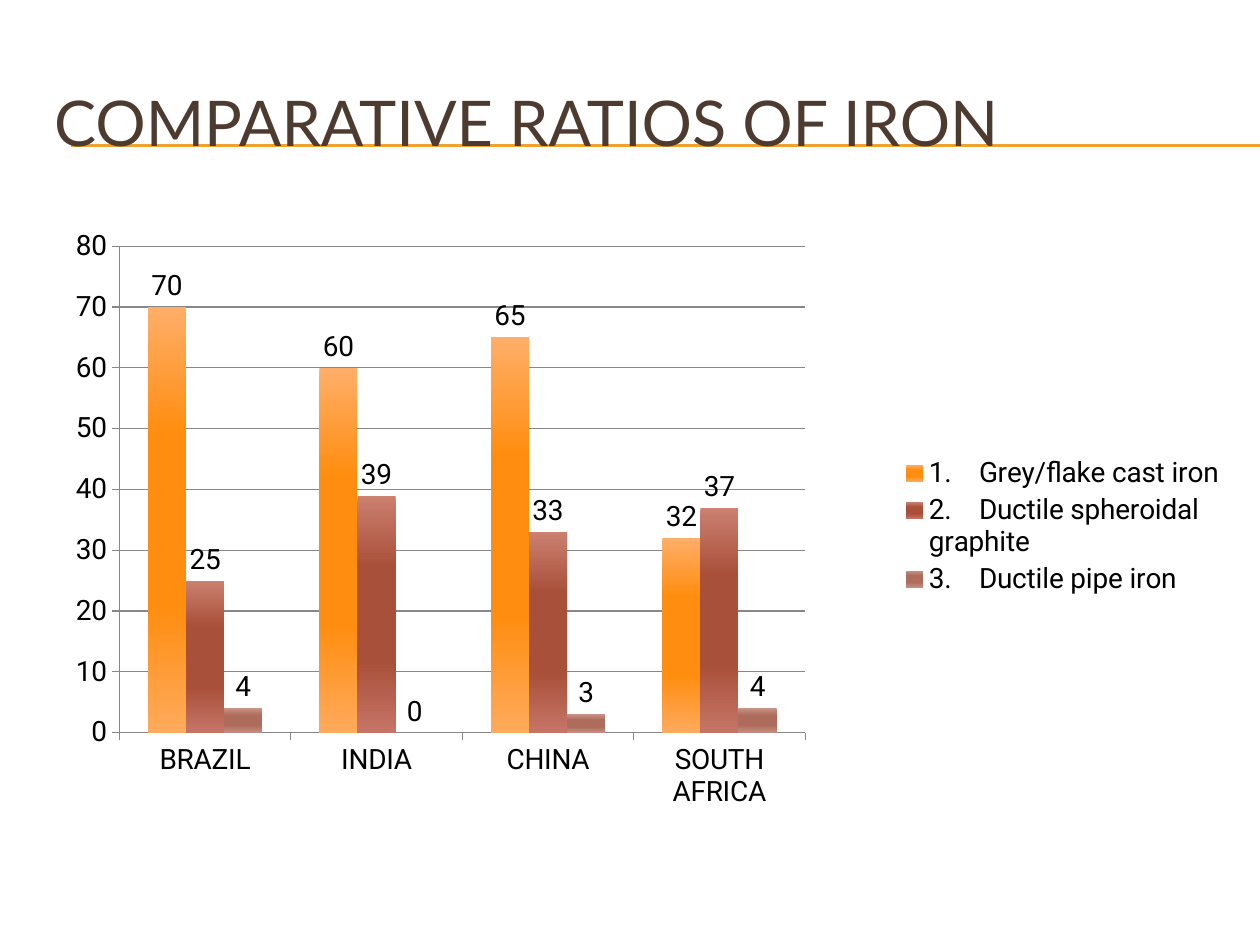
from dataclasses import dataclass

from lxml import etree
from pptx import Presentation
from pptx import util as u
from pptx.chart.data import CategoryChartData
from pptx.dml.color import RGBColor
from pptx.enum import chart as ch, shapes, text
from pptx.oxml import parse_xml
from pptx.oxml.ns import nsdecls, qn

WIDE, HIGH = 10, 7.5


@dataclass(frozen=True)
class Theme:
    head: str = "4E3B30"
    rule: str = "F0A22E"
    ink: str = "000000"
    grid: str = "878787"
    head_font: str = "Lato"
    body_font: str = "Roboto"
    head_size: int = 36
    body_size: int = 16
    thin: float = 0.75


@dataclass(frozen=True)
class Iron:
    name: str
    shares: tuple[int, ...]
    top: str
    core: str
    base: str


@dataclass(frozen=True)
class Box:
    """Left, top, width and height as shares of the slide or chart."""
    x: float
    y: float
    w: float
    h: float

    def place(self) -> tuple[int, ...]:
        return (u.Inches(self.x * WIDE), u.Inches(self.y * HIGH),
                u.Inches(self.w * WIDE), u.Inches(self.h * HIGH))


THEME = Theme()
TITLE = Box(0.033, 0.067, 0.95, 0.123)
CHART = Box(0.033, 0.227, 0.95, 0.66)
PLOT = Box(0.065, 0.051, 0.573, 0.78)
RULES = (1.15 / HIGH, 1.16 / HIGH)
LANDS = ("BRAZIL", "INDIA", "CHINA", "SOUTH AFRICA")
IRONS = (
    Iron("1.    Grey/flake cast iron", (70, 60, 65, 32),
         "FFAE69", "FF8D0F", "FFAA5C"),
    Iron("2.    Ductile spheroidal graphite", (25, 39, 33, 37),
         "CB8070", "A9503A", "C57568"),
    Iron("3.    Ductile pipe iron", (4, 0, 3, 4),
         "C99486", "AD6C5C", "C58E82"),
)


def color(code: str) -> RGBColor:
    return RGBColor.from_string(code)


def style(font, name: str, size: int, code: str) -> None:
    font.name, font.size = name, u.Pt(size)
    font.color.rgb = color(code)


def draw_rule(slide, y: float) -> None:
    top = u.Inches(y * HIGH)
    line = slide.shapes.add_connector(
        shapes.MSO_CONNECTOR.STRAIGHT, u.Inches(0.056 * WIDE), top,
        u.Inches(WIDE), top)
    line.line.color.rgb = color(THEME.rule)
    line.line.width = u.Pt(THEME.thin)
    etree.SubElement(line._element.spPr, qn("a:effectLst"))


def draw_title(slide, words: str) -> None:
    title = slide.shapes.title
    title.left, title.top, title.width, title.height = TITLE.place()
    frame = title.text_frame
    frame.word_wrap = True
    frame.auto_size = text.MSO_AUTO_SIZE.NONE
    frame.vertical_anchor = text.MSO_ANCHOR.MIDDLE
    para = frame.paragraphs[0]
    para.alignment = text.PP_ALIGN.LEFT
    run = para.add_run()
    run.text = words
    style(run.font, THEME.head_font, THEME.head_size, THEME.head)
    slide.shapes._spTree.append(title._element)  # in front of the rules


def shade(bar, iron: Iron) -> None:
    """Fill a series with a gradient that runs from top to base."""
    fill = bar.format.fill
    fill.gradient()
    fill.gradient_angle = 270
    stops = bar._element.spPr.find(".//" + qn("a:gsLst"))
    for stop in list(stops):
        stops.remove(stop)
    marks = ((0, iron.top), (30, iron.core), (70, iron.core), (100, iron.base))
    for share, code in marks:
        stop = etree.SubElement(stops, qn("a:gs"), pos=str(share * 1000))
        etree.SubElement(stop, qn("a:srgbClr"), val=code)


def fix_plot(chart, box: Box) -> None:
    """Give the inner plot area a fixed place in the chart."""
    area = chart._chartSpace.chart.plotArea
    for old in area.findall(qn("c:layout")):
        area.remove(old)
    parts = "".join(f'<c:{tag} val="{val}"/>' for tag, val in (
        ("layoutTarget", "inner"), ("xMode", "edge"), ("yMode", "edge"),
        ("x", box.x), ("y", box.y), ("w", box.w), ("h", box.h)))
    area.insert(0, parse_xml(
        f'<c:layout {nsdecls("c")}><c:manualLayout>{parts}'
        '</c:manualLayout></c:layout>'))


def draw_chart(slide) -> None:
    data = CategoryChartData(number_format="General")
    data.categories = LANDS
    for iron in IRONS:
        data.add_series(iron.name, iron.shares)
    chart = slide.shapes.add_chart(
        ch.XL_CHART_TYPE.COLUMN_CLUSTERED, *CHART.place(), data).chart
    style(chart.font, THEME.body_font, THEME.body_size, THEME.ink)
    chart.has_title = False
    chart.has_legend = True
    chart.legend.position = ch.XL_LEGEND_POSITION.RIGHT
    chart.legend.include_in_layout = False
    fix_plot(chart, PLOT)

    plot = chart.plots[0]
    plot.gap_width, plot.overlap, plot.vary_by_categories = 150, 0, False
    for bar, iron in zip(plot.series, IRONS):
        shade(bar, iron)
        bar.data_labels.show_value = True
        bar.data_labels.position = ch.XL_LABEL_POSITION.OUTSIDE_END

    value = chart.value_axis
    value.minimum_scale, value.maximum_scale, value.major_unit = 0, 80, 10
    value.has_major_gridlines = True
    for axis in (chart.category_axis, value):
        axis.major_tick_mark = ch.XL_TICK_MARK.OUTSIDE
        axis.minor_tick_mark = ch.XL_TICK_MARK.NONE
    for part in (chart.category_axis, value, value.major_gridlines):
        part.format.line.color.rgb = color(THEME.grid)
        part.format.line.width = u.Pt(THEME.thin)


def main() -> None:
    deck = Presentation()
    deck.slide_width, deck.slide_height = u.Inches(WIDE), u.Inches(HIGH)
    slide = deck.slides.add_slide(deck.slide_layouts[5])
    for y in RULES:
        draw_rule(slide, y)
    draw_title(slide, "COMPARATIVE RATIOS OF IRON")
    draw_chart(slide)
    deck.save("out.pptx")


if __name__ == "__main__":
    main()
